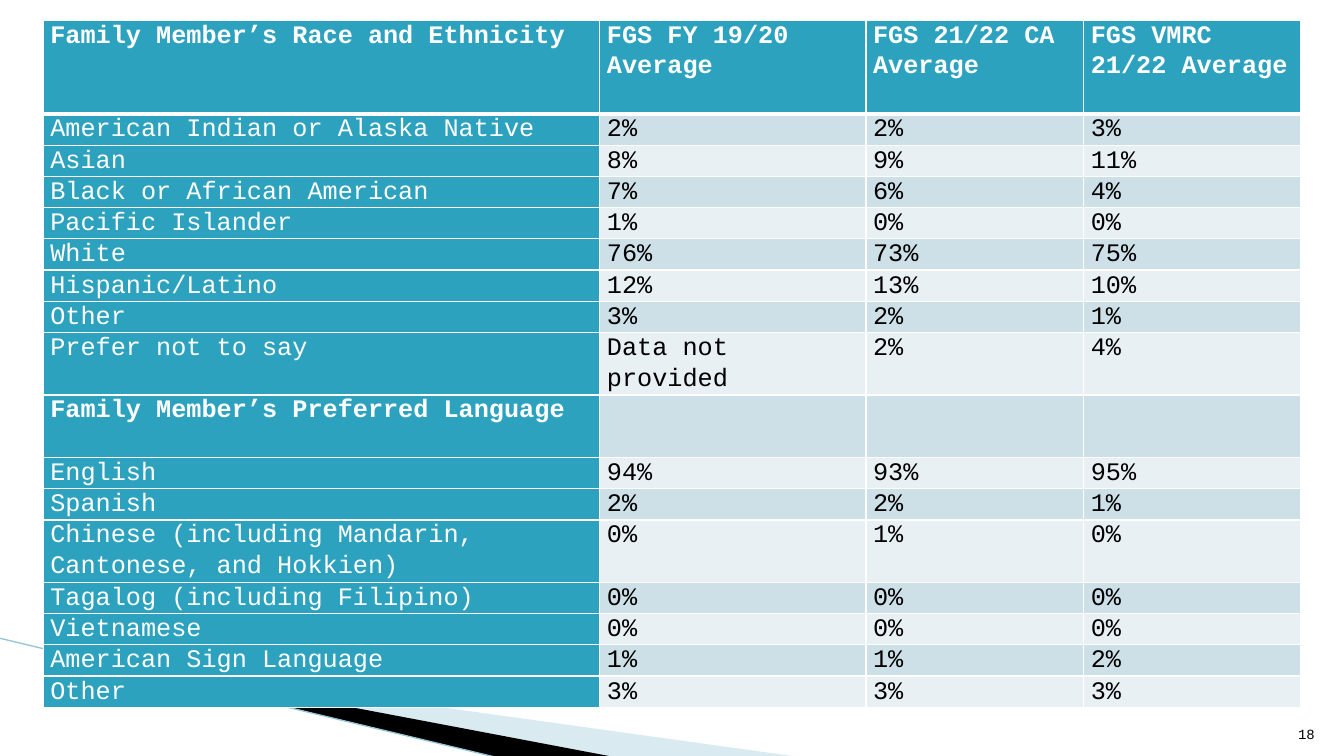
from typing import NamedTuple

from lxml import etree
from pptx import Presentation
from pptx import util as u
from pptx.dml.color import RGBColor
from pptx.enum import shapes, text
from pptx.oxml.ns import qn

# The slide is a grid of 1333 columns by 750 rows.
GRID_COLUMNS, GRID_ROWS = 1333, 750
CELL = u.Inches(0.01)
LINE_ROWS = 31  # grid rows taken by one line of table text
COLUMN_SPANS = (552, 264, 216, 215)
FONT = "Courier New"
COLORS = {
    "white": "FFFFFF",
    "black": "000000",
    "teal": "2DA2BF",
    "band_dark": "CDE0E8",
    "band_light": "E8F0F4",
    "wedge": "A0CBDC",
    "edge": "97C5D8",
}


class Wedge(NamedTuple):
    points: tuple[tuple[int, int], ...]
    color: str
    opacity: int = 100


class SurveyRow(NamedTuple):
    label: str
    values: tuple[str, ...] = ("", "", "")
    lines: int = 1
    heading: bool = False


WEDGES = (
    Wedge(((73, 651), (793, 751), (608, 751), (73, 650)), "wedge", 40),
    Wedge(((71, 649), (609, 751), (496, 752), (72, 650)), "black"),
)

SURVEY = (
    SurveyRow("Family Member’s Race and Ethnicity",
              ("FGS FY 19/20 Average", "FGS 21/22 CA Average", "FGS VMRC 21/22 Average"),
              lines=3, heading=True),
    SurveyRow("American Indian or Alaska Native", ("2%", "2%", "3%")),
    SurveyRow("Asian", ("8%", "9%", "11%")),
    SurveyRow("Black or African American", ("7%", "6%", "4%")),
    SurveyRow("Pacific Islander", ("1%", "0%", "0%")),
    SurveyRow("White", ("76%", "73%", "75%")),
    SurveyRow("Hispanic/Latino", ("12%", "13%", "10%")),
    SurveyRow("Other", ("3%", "2%", "1%")),
    SurveyRow("Prefer not to say", ("Data not provided", "2%", "4%"), lines=2),
    SurveyRow("Family Member’s Preferred Language", lines=2, heading=True),
    SurveyRow("English", ("94%", "93%", "95%")),
    SurveyRow("Spanish", ("2%", "2%", "1%")),
    SurveyRow("Chinese (including Mandarin, Cantonese, and Hokkien)",
              ("0%", "1%", "0%"), lines=2),
    SurveyRow("Tagalog (including Filipino)", ("0%", "0%", "0%")),
    SurveyRow("Vietnamese", ("0%", "0%", "0%")),
    SurveyRow("American Sign Language", ("1%", "1%", "2%")),
    SurveyRow("Other", ("3%", "3%", "3%")),
)


def cells(count: int) -> u.Emu:
    """Turn a number of grid cells into a length."""
    return u.Emu(count * CELL)


def rgb(name: str) -> RGBColor:
    return RGBColor.from_string(COLORS[name])


def draw_wedge(slide, wedge: Wedge) -> None:
    start, *rest = [(cells(x), cells(y)) for x, y in wedge.points]
    builder = slide.shapes.build_freeform(*start)
    builder.add_line_segments(rest, close=True)
    outline = builder.convert_to_shape()
    outline.shadow.inherit = False
    outline.line.fill.background()
    outline.fill.solid()
    outline.fill.fore_color.rgb = rgb(wedge.color)
    if wedge.opacity < 100:
        color = outline.fill._xPr.find(qn("a:solidFill"))[0]
        etree.SubElement(color, qn("a:alpha"), val=str(wedge.opacity * 1000))


def draw_edge(slide) -> None:
    edge = slide.shapes.add_connector(
        shapes.MSO_CONNECTOR.STRAIGHT, cells(-1), cells(633), cells(495), cells(752))
    edge.line.color.rgb = rgb("edge")
    edge.line.width = u.Pt(0.95)
    etree.SubElement(edge._element.spPr, qn("a:effectLst"))


def set_borders(cell, top: int, bottom: int) -> None:
    """Give a cell white borders; widths are in points."""
    properties = cell._tc.get_or_add_tcPr()
    for side, width in (("L", 1), ("R", 1), ("T", top), ("B", bottom)):
        border = etree.SubElement(properties, qn(f"a:ln{side}"), w=str(u.Pt(width)))
        fill = etree.SubElement(border, qn("a:solidFill"))
        etree.SubElement(fill, qn("a:srgbClr"), val=COLORS["white"])


def fill_cell(cell, words: str, background: str, ink: str, bold: bool) -> None:
    cell.fill.solid()
    cell.fill.fore_color.rgb = rgb(background)
    cell.margin_left = cell.margin_right = cells(7)
    cell.margin_top = cell.margin_bottom = 0
    cell.text = words
    paragraph = cell.text_frame.paragraphs[0]
    paragraph.line_spacing = 1.07
    paragraph.font.name = FONT
    paragraph.font.size = u.Pt(18)
    paragraph.font.bold = bold
    paragraph.font.color.rgb = rgb(ink)


def draw_survey(slide) -> None:
    height = LINE_ROWS * sum(row.lines for row in SURVEY)
    table = slide.shapes.add_table(
        len(SURVEY), len(COLUMN_SPANS), cells(43), cells(20),
        cells(sum(COLUMN_SPANS)), cells(height)).table
    table.first_col = True
    table.horz_banding = False
    for column, span in zip(table.columns, COLUMN_SPANS):
        column.width = cells(span)
    for r, row in enumerate(SURVEY):
        table.rows[r].height = cells(row.lines * LINE_ROWS)
        band = "band_dark" if r % 2 else "band_light"
        for c, words in enumerate((row.label, *row.values)):
            cell = table.cell(r, c)
            set_borders(cell, top=3 if r == 1 else 1, bottom=3 if r == 0 else 1)
            titled = r == 0 or c == 0
            fill_cell(cell, words, "teal" if titled else band,
                      "white" if titled else "black", row.heading)


def draw_page_number(slide) -> None:
    frame = slide.shapes.add_textbox(cells(1261), cells(701), cells(53), cells(40)).text_frame
    frame.word_wrap = True
    frame.vertical_anchor = text.MSO_ANCHOR.BOTTOM
    number = frame.paragraphs[0]
    number.text = "18"
    number.alignment = text.PP_ALIGN.RIGHT
    number.font.name = FONT
    number.font.size = u.Pt(10)
    number.font.color.rgb = rgb("black")


def main() -> None:
    deck = Presentation()
    deck.slide_width = cells(GRID_COLUMNS)
    deck.slide_height = cells(GRID_ROWS)
    slide = deck.slides.add_slide(deck.slide_layouts[6])
    for wedge in WEDGES:
        draw_wedge(slide, wedge)
    draw_edge(slide)
    draw_survey(slide)
    draw_page_number(slide)
    deck.save("out.pptx")


if __name__ == "__main__":
    main()
